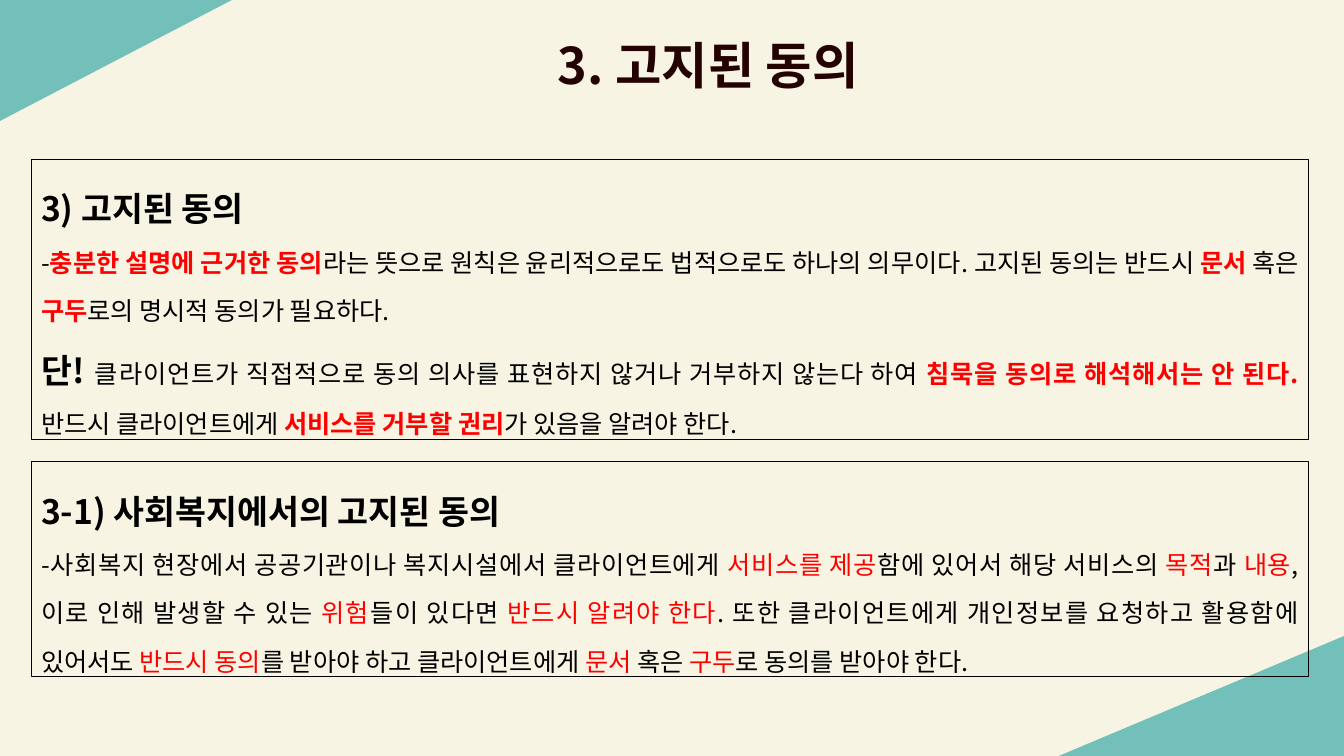
from lxml.etree import SubElement
from pptx import Presentation
from pptx.dml.color import RGBColor
from pptx.enum.shapes import MSO_SHAPE as SHAPE
from pptx.enum.text import MSO_ANCHOR as ANCHOR, MSO_AUTO_SIZE as FIT, PP_ALIGN as ALIGN
from pptx.oxml.ns import qn
from pptx.util import Inches, Pt

CREAM = RGBColor(0xF7, 0xF4, 0xE3)
TEAL = RGBColor(0x73, 0xC0, 0xBA)
BROWN = RGBColor(0x24, 0x02, 0x02)
BLACK = RGBColor(0, 0, 0)
RED = RGBColor(0xFF, 0, 0)
FONT = "Noto Sans CJK KR"

HEAD = (24, BLACK, True)
BODY = (18, BLACK, False)
STRONG = (18, RED, True)
ACCENT = (18, RED, False)

CONSENT = [
    [("3) 고지된 동의", HEAD)],
    [("-", BODY), ("충분한 설명에 근거한 동의", STRONG),
     ("라는 뜻으로 원칙은 윤리적으로도 법적으로도 하나의 의무이다. 고지된 동의는 반드시 ", BODY),
     ("문서", STRONG), (" 혹은 ", BODY), ("구두", STRONG),
     ("로의 명시적 동의가 필요하다.", BODY)],
    [("단! ", HEAD),
     ("클라이언트가 직접적으로 동의 의사를 표현하지 않거나 거부하지 않는다 하여 ", BODY),
     ("침묵을 동의로 해석해서는 안 된다. ", STRONG),
     ("반드시 클라이언트에게 ", BODY), ("서비스를 거부할 권리", STRONG),
     ("가 있음을 알려야 한다.", BODY)],
]
WELFARE = [
    [("3-1) 사회복지에서의 고지된 동의", HEAD)],
    [("-사회복지 현장에서 공공기관이나 복지시설에서 클라이언트에게 ", BODY),
     ("서비스를 제공", ACCENT), ("함에 있어서 해당 서비스의 ", BODY),
     ("목적", ACCENT), ("과 ", BODY), ("내용", ACCENT),
     (", 이로 인해 발생할 수 있는 ", BODY), ("위험", ACCENT),
     ("들이 있다면 ", BODY), ("반드시 알려야 한다", ACCENT),
     (". 또한 클라이언트에게 개인정보를 요청하고 활용함에 있어서도 ", BODY),
     ("반드시 동의", ACCENT), ("를 받아야 하고 클라이언트에게 ", BODY),
     ("문서", ACCENT), (" 혹은 ", BODY), ("구두", ACCENT),
     ("로 동의를 받아야 한다.", BODY)],
]


def add_run(p, text, style):
    r = p.add_run()
    r.text = text
    size, color, bold = style
    r.font.size = Pt(size)
    r.font.bold = bold
    r.font.color.rgb = color
    r.font.name = FONT
    SubElement(r.font._element, qn("a:ea")).set("typeface", FONT)


def fill_text(tf, paragraphs, align, spacing):
    tf.word_wrap = True
    tf.auto_size = FIT.SHAPE_TO_FIT_TEXT
    tf.vertical_anchor = ANCHOR.TOP
    for i, runs in enumerate(paragraphs):
        p = tf.add_paragraph() if i else tf.paragraphs[0]
        p.alignment = align
        p.line_spacing = spacing
        for text, style in runs:
            add_run(p, text, style)


def add_corner(slide, x, y, w, h, rotation=0):
    s = slide.shapes.add_shape(SHAPE.ISOSCELES_TRIANGLE, Inches(x), Inches(y), Inches(w), Inches(h))
    s.adjustments[0] = 0
    s.rotation = rotation
    s._element.spPr.xfrm.set("flipH", "1")
    s.shadow.inherit = False
    s.fill.solid()
    s.fill.fore_color.rgb = TEAL
    s.line.fill.background()


def add_title(slide, text):
    s = slide.shapes.add_textbox(Inches(2.94), Inches(0.29), Inches(8.17), Inches(0.71))
    fill_text(s.text_frame, [[(text, (36, BROWN, True))]], ALIGN.CENTER, 1.0)


def add_panel(slide, y, h, paragraphs):
    s = slide.shapes.add_shape(SHAPE.RECTANGLE, Inches(0.31), Inches(y), Inches(12.67), Inches(h))
    s.shadow.inherit = False
    s.fill.background()
    s.line.color.rgb = BLACK
    s.line.width = Pt(0.75)
    fill_text(s.text_frame, paragraphs, ALIGN.JUSTIFY, 1.6)


def main():
    prs = Presentation()
    prs.slide_width, prs.slide_height = Inches(13.33), Inches(7.5)
    slide = prs.slides.add_slide(prs.slide_layouts[6])
    slide.background.fill.solid()
    slide.background.fill.fore_color.rgb = CREAM
    add_corner(slide, 10.5, 6.31, 2.83, 1.19)
    add_corner(slide, 0, 0, 2.3, 1.2, rotation=180)
    add_title(slide, "3. 고지된 동의")
    add_panel(slide, 1.58, 2.78, CONSENT)
    add_panel(slide, 4.58, 2.13, WELFARE)
    prs.save("out.pptx")


if __name__ == "__main__":
    main()
